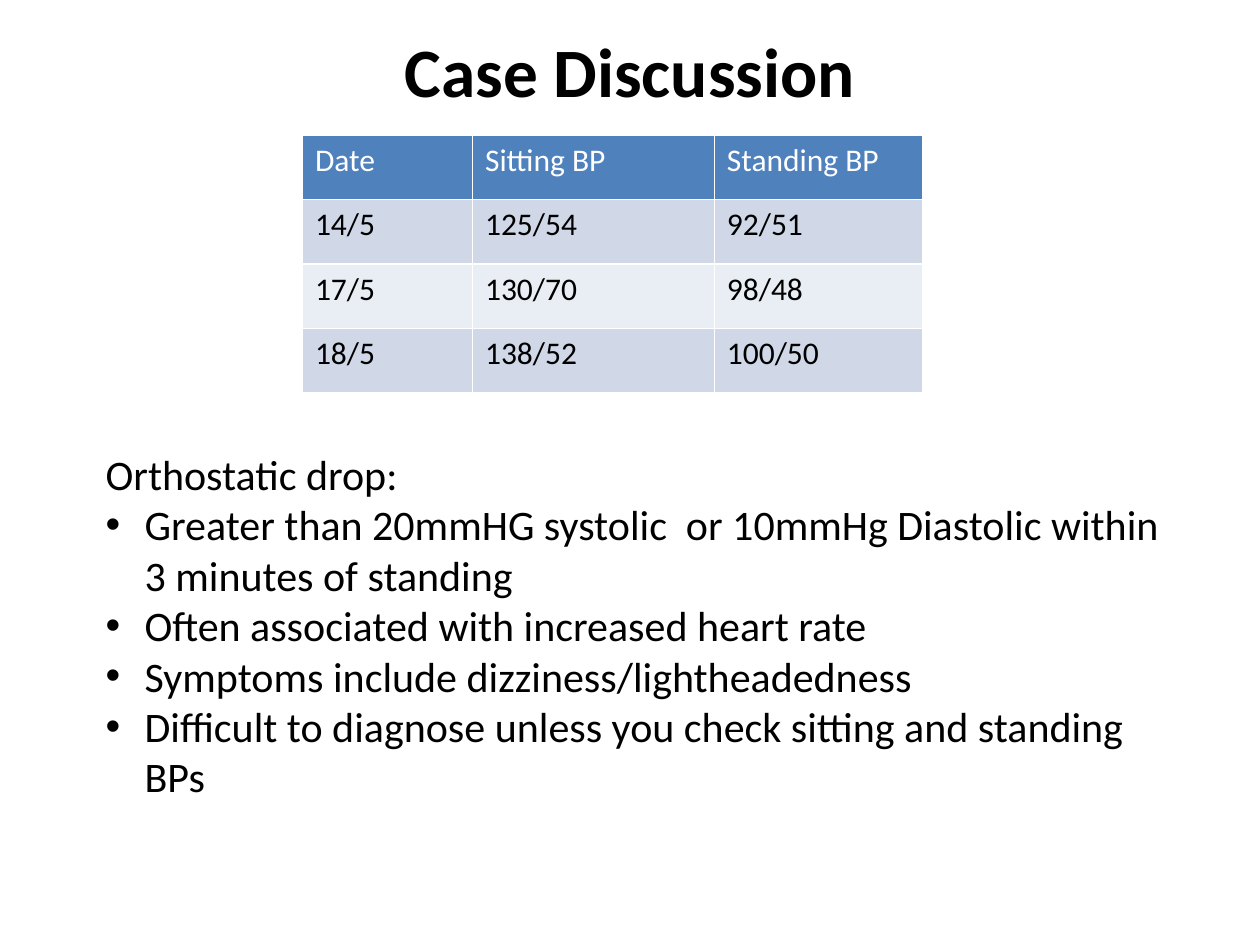
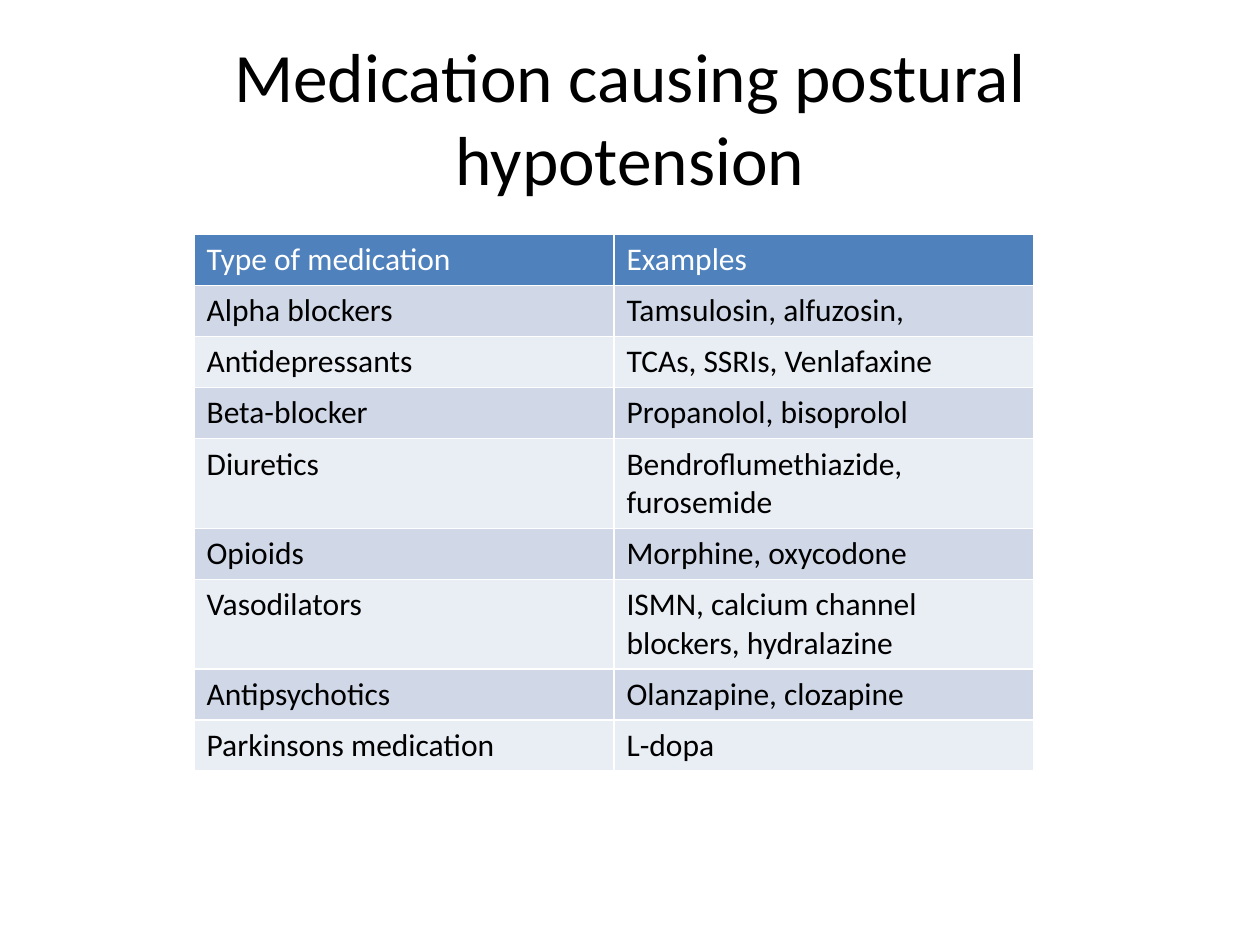
from dataclasses import dataclass

from lxml import etree
from pptx import Presentation
from pptx import util as u
from pptx.dml.color import RGBColor
from pptx.enum import text
from pptx.oxml import ns


@dataclass(frozen=True)
class Theme:
    font: str = "Calibri"
    ink: str = "000000"
    header: str = "4F81BD"
    header_ink: str = "FFFFFF"
    bands: tuple = ("D0D8E8", "E9EDF4")
    title_size: float = 39.6
    body_size: float = 24
    table_size: float = 18


theme = Theme()

deck = Presentation()
deck.slide_width, deck.slide_height = u.Inches(10), u.Inches(7.5)
column, row = deck.slide_width / 100, deck.slide_height / 100  # 100 x 100 grid
title_only = deck.slide_layouts[5]


def add_run(paragraph, words, size, color, bold=False):
    run = paragraph.add_run()
    run.text = words
    run.font.name, run.font.size, run.font.bold = theme.font, u.Pt(size), bold
    run.font.color.rgb = RGBColor.from_string(color)


def area(left, top, width, height):
    return (round(left * column), round(top * row),
            round(width * column), round(height * row))


# Content: title, its place, and the table with its grid measures
pages = [
    dict(title="Case Discussion", bold=True, title_area=(5, 2.8, 90, 9.07),
         table_at=(24, 14.27), widths=(13.5, 19.2, 16.5), row_height=6.83,
         rows=[("Date", "Sitting BP", "Standing BP"),
               ("14/5", "125/54", "92/51"),
               ("17/5", "130/70", "98/48"),
               ("18/5", "138/52", "100/50")]),
    dict(title="Medication causing postural hypotension", bold=False,
         title_area=(5, 4, 90, 16.67),
         table_at=(15.4, 24.8), widths=(33.33, 33.33), row_height=5.41,
         rows=[("Type of medication", "Examples"),
               ("Alpha blockers", "Tamsulosin, alfuzosin,"),
               ("Antidepressants", "TCAs, SSRIs, Venlafaxine"),
               ("Beta-blocker", "Propanolol, bisoprolol"),
               ("Diuretics", "Bendroflumethiazide, furosemide"),
               ("Opioids", "Morphine, oxycodone"),
               ("Vasodilators", "ISMN, calcium channel blockers, hydralazine"),
               ("Antipsychotics", "Olanzapine, clozapine"),
               ("Parkinsons medication", "L-dopa")]),
]

for page in pages:
    slide = deck.slides.add_slide(title_only)

    # Title
    title = slide.shapes.title
    title.left, title.top, title.width, title.height = area(*page["title_area"])
    title.text_frame.auto_size = text.MSO_AUTO_SIZE.NONE
    title.text_frame.vertical_anchor = text.MSO_ANCHOR.MIDDLE
    heading = title.text_frame.paragraphs[0]
    heading.alignment = text.PP_ALIGN.CENTER
    add_run(heading, page["title"], theme.title_size, theme.ink, page["bold"])

    # Table: the default table style supplies the white rules
    rows, widths = page["rows"], page["widths"]
    table = slide.shapes.add_table(
        len(rows), len(widths),
        *area(*page["table_at"], sum(widths), page["row_height"] * len(rows))).table
    for table_column, width in zip(table.columns, widths):
        table_column.width = round(width * column)
    for r, entries in enumerate(rows):
        table.rows[r].height = round(page["row_height"] * row)
        fill = theme.bands[(r - 1) % 2] if r else theme.header
        ink = theme.ink if r else theme.header_ink
        for c, entry in enumerate(entries):
            cell = table.cell(r, c)
            cell.fill.solid()
            cell.fill.fore_color.rgb = RGBColor.from_string(fill)
            add_run(cell.text_frame.paragraphs[0], entry, theme.table_size, ink)

# Definition of the orthostatic drop, below the first table
definition = deck.slides[0].shapes.add_textbox(*area(7.4, 46.8, 86.6, 39.07)).text_frame
definition.word_wrap = True
definition.auto_size = text.MSO_AUTO_SIZE.SHAPE_TO_FIT_TEXT
add_run(definition.paragraphs[0], "Orthostatic drop:", theme.body_size, theme.ink)
for criterion in (
        "Greater than 20mmHG systolic  or 10mmHg Diastolic within 3 minutes of standing",
        "Often associated with increased heart rate",
        "Symptoms include dizziness/lightheadedness",
        "Difficult to diagnose unless you check sitting and standing BPs"):
    bullet = definition.add_paragraph()
    add_run(bullet, criterion, theme.body_size, theme.ink)
    properties = bullet._p.get_or_add_pPr()
    indent = u.Inches(0.31)
    properties.set("marL", str(indent))
    properties.set("indent", str(-indent))
    etree.SubElement(properties, ns.qn("a:buFont")).set("typeface", "Arial")
    etree.SubElement(properties, ns.qn("a:buChar")).set("char", "•")

deck.save("out.pptx")
